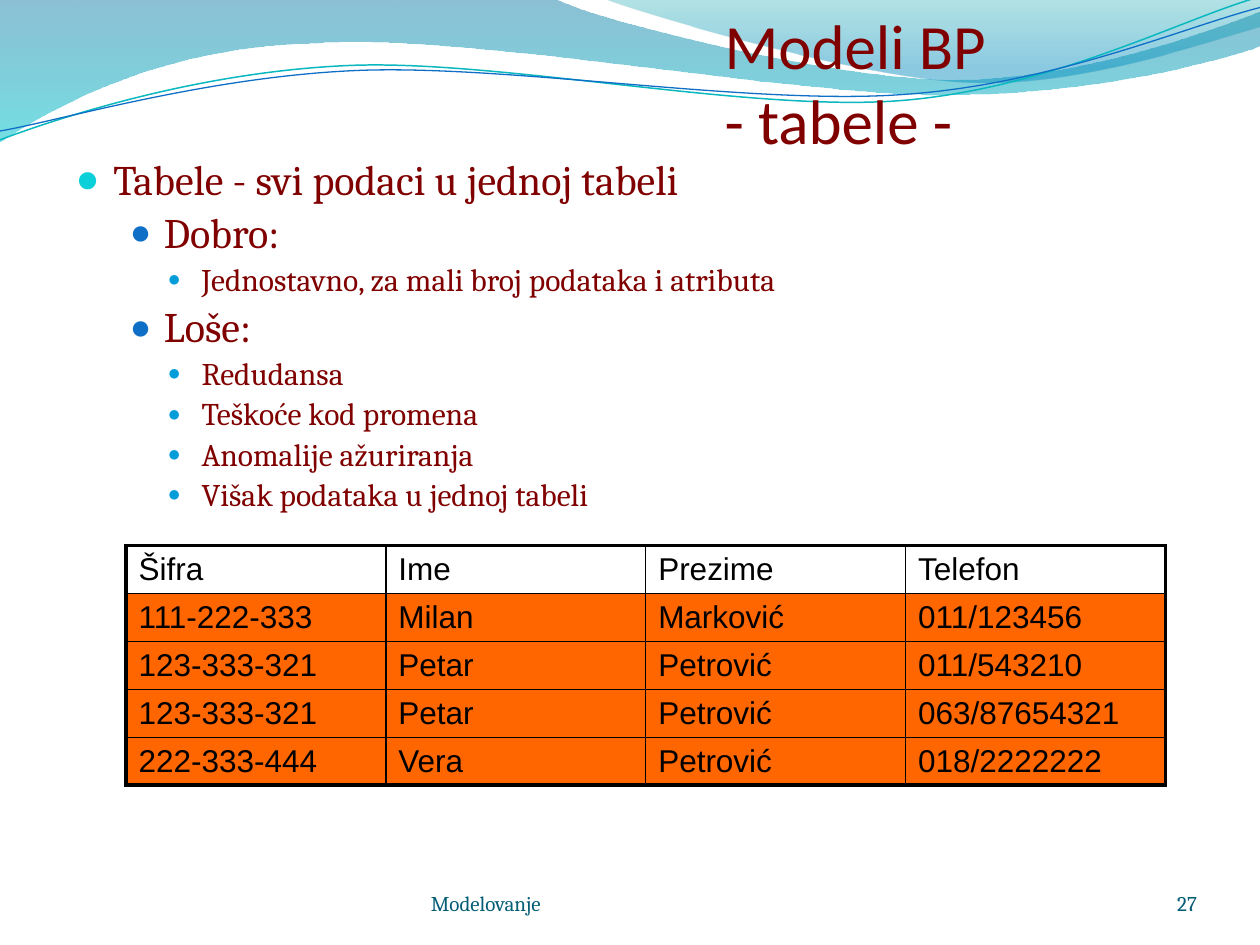
import copy
import math
import pptx
import pptx.util
import pptx.dml.color
import pptx.enum.text
import pptx.oxml.ns
import lxml.etree

Inches = pptx.util.Inches
Pt = pptx.util.Pt
qn = pptx.oxml.ns.qn
ALIGN = pptx.enum.text.PP_ALIGN
ANCHOR = pptx.enum.text.MSO_ANCHOR
MAROON, TEAL, BLACK, ORANGE = "800000", "045D75", "000000", "FF6600"


def rgb(value):
    return pptx.dml.color.RGBColor.from_string(value)


def write(p, text, size=18, font="Cambria", color=MAROON, align=ALIGN.LEFT):
    p.text = text
    p.alignment = align
    for r in p.runs:
        r.font.size = Pt(size)
        r.font.name = font
        r.font.color.rgb = rgb(color)
    for br in p._p.findall(qn("a:br")):
        br.append(copy.deepcopy(p.runs[0]._r.rPr))


prs = pptx.Presentation()
prs.slide_width, prs.slide_height = Inches(10), Inches(7.5)
s = prs.slides.add_slide(prs.slide_layouts[1])

waves = [
    ([(0, 0),
      (4.4, -0.01), (4.76, 0.17, 6.64, 0.63, 7.58, 0.63), (8.53, 0.63, 9.58, 0.26, 10, 0.09),
      (10.01, 0.36), (9.83, 0.44, 8.7, 0.76, 7.46, 0.75), (6.22, 0.75, 3.82, 0.28, 2.57, 0.34),
      (1.29, 0.36, 0.46, 0.83, -0.01, 1.13), (0, 0)],
     [(0, "0074A1", 45), (1, "00C6CF", 55)], None, 0, (0, 0)),
    ([(4.79, -0.01),
      (5.09, 0.11, 6.82, 0.62, 7.69, 0.65), (8.56, 0.69, 9.61, 0.32, 10, 0.21), (10, 0),
      (4.79, -0.01)],
     [(0, "00A1A9", 30), (0.8, "008BBF", 45)], None, 0, (0, 0)),
    ([(0, 1.11),
      (0.48, 0.93, 1.58, 0.57, 2.77, 0.52), (3.95, 0.47, 5.93, 0.89, 7.13, 0.8),
      (8.33, 0.71, 9.38, 0.15, 9.98, -0.02)],
     None, ("0AB8BF", 0.85), -2.7, (4.99, 0.57)),
    ([(0, 1.04),
      (0.47, 0.96, 1.64, 0.61, 2.83, 0.56), (4.03, 0.51, 5.97, 0.84, 7.17, 0.75),
      (8.36, 0.67, 9.41, 0.21, 10, 0.06)],
     None, ("0F6FC6", 0.75), -2.7, (5, 0.59)),
]
for index, (segments, stops, line, angle, (cx, cy)) in enumerate(waves):
    cos, sin = math.cos(math.radians(-angle)), math.sin(math.radians(-angle))
    curves = [[(Inches(cx + (x - cx) * cos - (y - cy) * sin),
                Inches(cy + (x - cx) * sin + (y - cy) * cos))
               for x, y in zip(seg[::2], seg[1::2])] for seg in segments]
    builder = s.shapes.build_freeform(*curves[0][0])
    builder.add_line_segments([curve[-1] for curve in curves[1:]], close=stops is not None)
    sp = builder.convert_to_shape()
    lines = list(sp._element.spPr.iter(qn("a:lnTo")))
    for ln, curve in zip(lines, curves[1:]):
        if len(curve) == 3:
            ln.tag = qn("a:cubicBezTo")
            for i, (x, y) in enumerate(curve[:2]):
                pt = lxml.etree.Element(qn("a:pt"), x=str(x - sp.left), y=str(y - sp.top))
                ln.insert(i, pt)
    sp.rotation = angle
    sp.shadow.inherit = False
    if stops:
        sp.line.fill.background()
        sp.fill.gradient()
        sp.fill.gradient_angle = 270
        for stop, (position, color, alpha) in zip(sp.fill.gradient_stops, stops):
            stop.position = position
            stop.color.rgb = rgb(color)
        for clr, (position, color, alpha) in zip(sp._element.spPr.iter(qn("a:srgbClr")), stops):
            lxml.etree.SubElement(clr, qn("a:alpha"), val=str(alpha * 1000))
    else:
        sp.fill.background()
        sp.line.color.rgb = rgb(line[0])
        sp.line.width = Pt(line[1])
    prs.slide_master.shapes._spTree.insert(2 + index, sp._element)

title = s.shapes.title
title.left, title.top, title.width, title.height = Inches(5.75), Inches(0), Inches(4), Inches(1.25)
tf = title.text_frame
tf.auto_size = pptx.enum.text.MSO_AUTO_SIZE.NONE
tf.vertical_anchor = ANCHOR.BOTTOM
tf.margin_left = tf.margin_right = tf.margin_bottom = 0
tf.margin_top = Inches(0.05)
write(tf.paragraphs[0], "Modeli BP\v- tabele -", size=36, font="Calibri")

body = s.placeholders[1]
body.left, body.top, body.width, body.height = Inches(0.5), Inches(1.17), Inches(9.17), Inches(3.08)
tf = body.text_frame
tf.auto_size = pptx.enum.text.MSO_AUTO_SIZE.NONE
levels = [(0.3, 0.3, "0BD0D9", 95, 24, 1), (0.7, 0.27, "0F6FC6", 85, 24, 0.9),
          (1, 0.27, "009DD9", 70, 18, 0.9)]
items = [(0, "Tabele - svi podaci u jednoj tabeli"), (1, "Dobro:"),
         (2, "Jednostavno, za mali broj podataka i atributa"), (1, "Loše:"), (2, "Redudansa"),
         (2, "Teškoće kod promena"), (2, "Anomalije ažuriranja"),
         (2, "Višak podataka u jednoj tabeli")]
for i, (level, text) in enumerate(items):
    margin, hang, color, percent, size, spacing = levels[level]
    p = tf.add_paragraph() if i else tf.paragraphs[0]
    p.level = level
    pPr = p._p.get_or_add_pPr()
    pPr.set("marL", str(Inches(margin)))
    pPr.set("indent", str(-Inches(hang)))
    buClr = lxml.etree.SubElement(pPr, qn("a:buClr"))
    lxml.etree.SubElement(buClr, qn("a:srgbClr"), val=color)
    lxml.etree.SubElement(pPr, qn("a:buSzPct"), val=str(percent * 1000))
    lxml.etree.SubElement(pPr, qn("a:buChar"), char="●")
    p.line_spacing = spacing
    if i == 0:
        p.space_before = Pt(0)
    write(p, text, size=size)

rows = [
    ("Šifra", "Ime", "Prezime", "Telefon"),
    ("111-222-333", "Milan", "Marković", "011/123456"),
    ("123-333-321", "Petar", "Petrović", "011/543210"),
    ("123-333-321", "Petar", "Petrović", "063/87654321"),
    ("222-333-444", "Vera", "Petrović", "018/2222222"),
]
table = s.shapes.add_table(len(rows), len(rows[0]), Inches(1), Inches(4.33),
                           Inches(8.25), Inches(1.9)).table
table.first_row = table.horz_banding = False
for i, row in enumerate(rows):
    table.rows[i].height = Inches(0.38)
    for j, text in enumerate(row):
        cell = table.cell(i, j)
        write(cell.text_frame.paragraphs[0], text, font="Arial", color=BLACK)
        outer = {"L": j == 0, "R": j == len(row) - 1, "T": i == 0, "B": i == len(rows) - 1}
        tcPr = cell._tc.get_or_add_tcPr()
        for side, thick in outer.items():
            ln = lxml.etree.SubElement(tcPr, qn("a:ln" + side), w=str(Pt(2.25 if thick else 1)))
            fill = lxml.etree.SubElement(ln, qn("a:solidFill"))
            lxml.etree.SubElement(fill, qn("a:srgbClr"), val=BLACK)
        if i:
            cell.fill.solid()
            cell.fill.fore_color.rgb = rgb(ORANGE)
        else:
            cell.fill.background()

for text, left, width, align in [("Modelovanje", 3.42, 3.17, ALIGN.LEFT),
                                 ("27", 7.17, 2.33, ALIGN.RIGHT)]:
    tf = s.shapes.add_textbox(Inches(left), Inches(7), Inches(width), Inches(0.27)).text_frame
    tf.word_wrap = True
    tf.vertical_anchor = ANCHOR.BOTTOM
    tf.margin_left = tf.margin_right = tf.margin_top = tf.margin_bottom = 0
    write(tf.paragraphs[0], text, size=12, color=TEAL, align=align)

prs.save("out.pptx")
